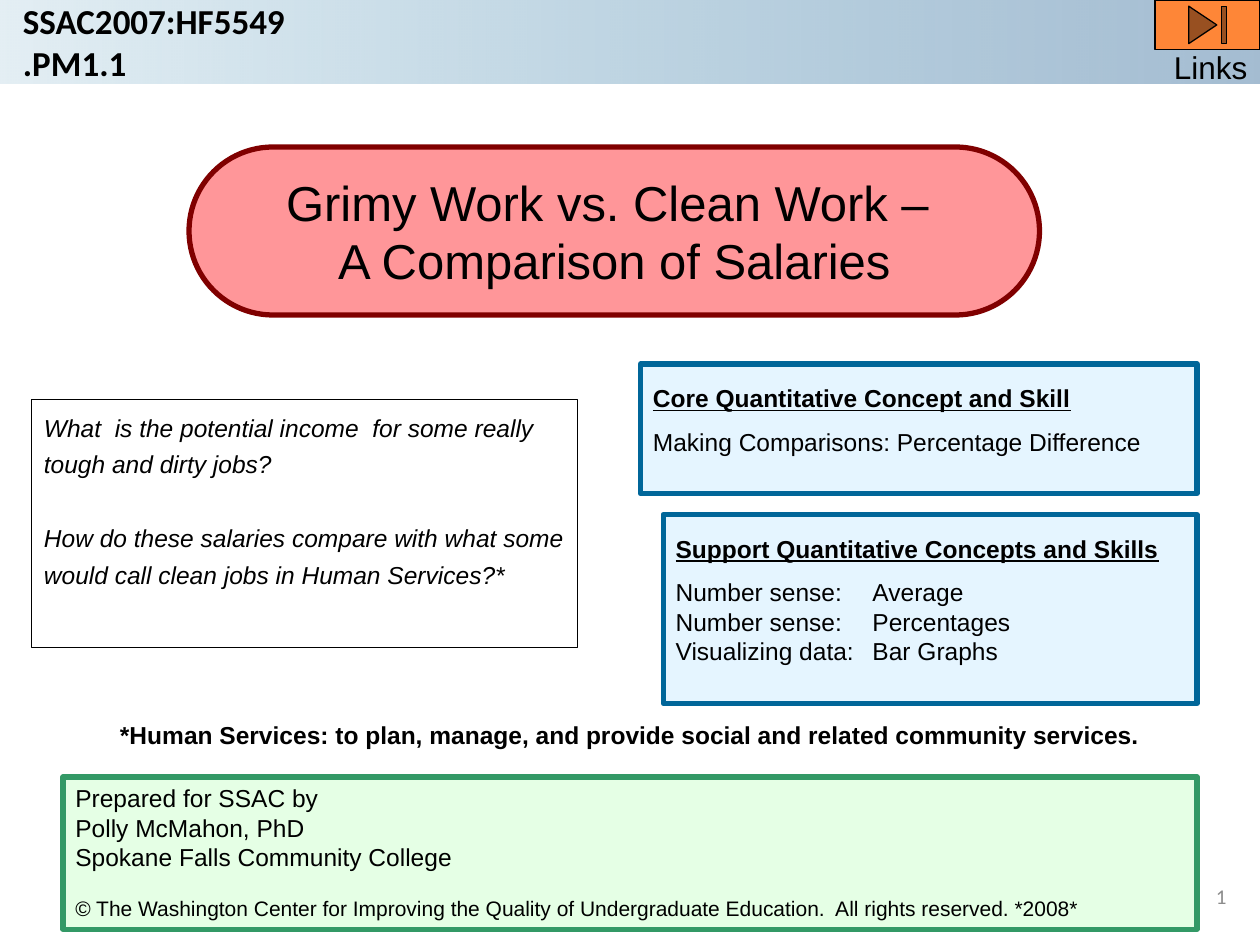
from lxml.etree import SubElement as Sub
from pptx import Presentation
from pptx.dml.color import RGBColor as Rgb
from pptx.enum.shapes import MSO_SHAPE as Kind
from pptx.enum.text import MSO_ANCHOR as Anchor, PP_ALIGN as Align
from pptx.oxml.ns import qn
from pptx.util import Pt

COLORS = {
    "black": "000000", "gray": "8C8C8C", "orange": "FE8637",
    "blue": "006699", "steel": "3E729F", "sky": "CCECFF",
    "green": "339966", "mint": "CCFFCC", "red": "800000", "pink": "FF7C80",
}


def tint(name):
    return Rgb.from_string(COLORS[name])


def fade(node, *parts):
    """Set the opacity, in percent, of each colour in a fill, in order."""
    for clr, part in zip(node.iter(qn("a:srgbClr")), parts):
        Sub(clr, qn("a:alpha"), val=str(part * 1000))


def add_box(slide, place, fill=None, line=None, width=3, alpha=None, kind=Kind.RECTANGLE):
    box = slide.shapes.add_shape(kind, *map(Pt, place))
    box.shadow.inherit = False
    if fill:
        box.fill.solid()
        box.fill.fore_color.rgb = tint(fill)
        if alpha:
            fade(box.fill._xPr.find(qn("a:solidFill")), alpha)
    else:
        box.fill.background()
    if line:
        box.line.color.rgb = tint(line)
        box.line.width = Pt(width)
    else:
        box.line.fill.background()
    return box


def add_label(slide, place):
    return slide.shapes.add_textbox(*map(Pt, place))


def style(run, size=14, face="Arial", color="black", bold=False, slant=False, under=False):
    font = run.font
    font.size, font.name = Pt(size), face
    font.bold, font.italic, font.underline = bold, slant, under
    font.color.rgb = tint(color)


def write(shape, lines, align=Align.LEFT, anchor=Anchor.TOP, wrap=True, **look):
    """Fill a shape with one paragraph per line, all in one look."""
    frame = shape.text_frame
    frame.word_wrap, frame.vertical_anchor = wrap, anchor
    frame.text = "\n".join(lines)
    for para in frame.paragraphs:
        para.alignment = align
        for run in para.runs:
            style(run, **look)
    return frame.paragraphs


def add_skill(slide, place, head, lines):
    """Blue box with an underlined heading and tabbed lines."""
    box = add_box(slide, place, "sky", "blue", alpha=50)
    paras = write(box, [head, *lines])
    style(paras[0].runs[0], bold=True, under=True)
    paras[0].line_spacing = 1.45
    paras[0].space_after = Pt(8)
    for para in paras:
        tabs = Sub(para._p.get_or_add_pPr(), qn("a:tabLst"))
        Sub(tabs, qn("a:tab"), pos=str(Pt(112.5)), algn="l")


def add_band(slide):
    band = add_box(slide, (0, 0, 720, 48))
    band.fill.gradient()
    band.fill.gradient_angle = 0
    for stop, name, spot in zip(band.fill.gradient_stops, ("blue", "steel"), (0, 1)):
        stop.color.rgb = tint(name)
        stop.position = spot
    fade(band.fill._xPr.find(qn("a:gradFill")), 11, 47)


def main():
    deck = Presentation()
    deck.slide_width, deck.slide_height = Pt(720), Pt(540)
    slide = deck.slides.add_slide(deck.slide_layouts[6])

    # Header band, link button and page number
    add_band(slide)
    add_box(slide, (660, 0, 60, 28.5), "orange", "black", 0.75, kind=Kind.ACTION_BUTTON_END)
    write(add_label(slide, (663.75, 24, 56.25, 29)), ["Links"], wrap=False, size=18)
    write(add_label(slide, (540, 498, 168, 28.75)), ["1"], Align.RIGHT, Anchor.MIDDLE,
          size=12, face="Calibri", color="gray")
    write(add_label(slide, (6, 6, 168, 36)), ["SSAC2007:HF5549.PM1.1"],
          anchor=Anchor.MIDDLE, wrap=False, size=20, face="Calibri", bold=True)

    # Title
    title = add_box(slide, (108, 84, 486, 96), "pink", "red", alpha=80,
                    kind=Kind.ROUNDED_RECTANGLE)
    title.adjustments[0] = 0.5
    write(title, ["Grimy Work vs. Clean Work – ", "A Comparison of Salaries"],
          Align.CENTER, Anchor.MIDDLE, wrap=False, size=28)

    # Questions
    asks = write(add_box(slide, (18, 228, 312, 141.75), line="black", width=0.5), [
        "What  is the potential income  for some really tough and dirty jobs?",
        "How do these salaries compare with what some would call clean jobs in Human Services?*",
    ], slant=True)
    for para in asks:
        para.line_spacing = 1.25
    asks[1].space_before = Pt(21)

    # Skills
    add_skill(slide, (366, 208, 318, 74), "Core Quantitative Concept and Skill",
              ["Making Comparisons: Percentage Difference"])
    add_skill(slide, (379, 294, 305, 108), "Support Quantitative Concepts and Skills", [
        "Number sense: \tAverage",
        "Number sense: \tPercentages",
        "Visualizing data: \tBar Graphs",
    ])

    # Footnote and credits
    write(add_label(slide, (36, 408, 648, 24)), [
        "*Human Services: to plan, manage, and provide social and related community services.",
    ], Align.CENTER, bold=True)
    notes = write(add_box(slide, (36, 444, 648, 87), "mint", "green", alpha=50), [
        "Prepared for SSAC by",
        "Polly McMahon, PhD",
        "Spokane Falls Community College",
        "© The Washington Center for Improving the Quality of Undergraduate Education."
        "  All rights reserved. *2008*",
    ])
    style(notes[3].runs[0], size=12)
    notes[3].space_before = Pt(14)

    deck.save("out.pptx")


if __name__ == "__main__":
    main()
